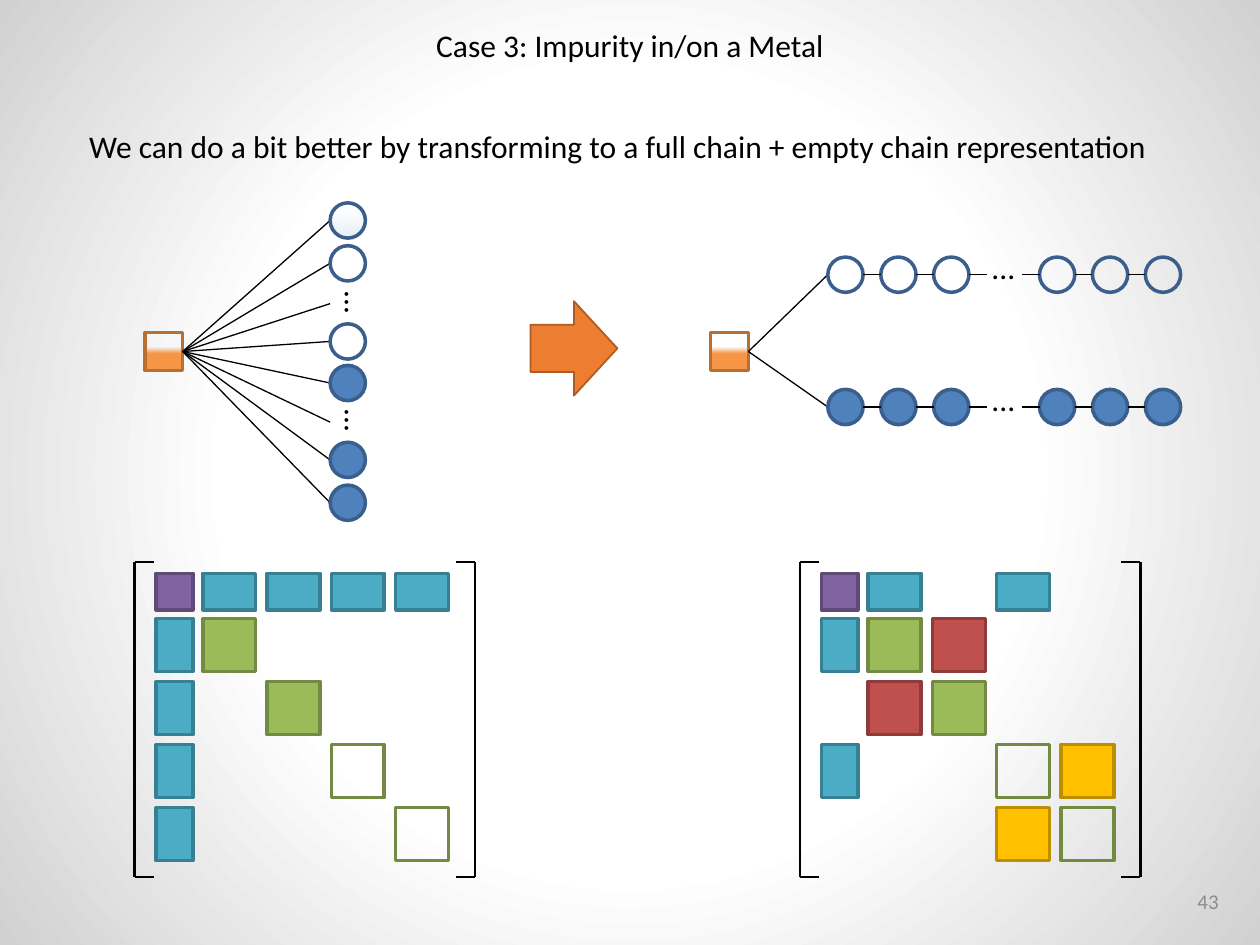
"""Build the slide on turning an impurity star geometry into a full and an empty chain."""
from pptx import Presentation
from pptx.dml.color import RGBColor
from pptx.enum.shapes import MSO_CONNECTOR, MSO_SHAPE
from pptx.enum.text import MSO_ANCHOR, MSO_AUTO_SIZE, PP_ALIGN
from pptx.oxml import parse_xml
from pptx.oxml.ns import qn
from pptx.util import Inches, Pt
from lxml.etree import SubElement

TEXTS = [
    {"text": "We can do a bit better by transforming to a full chain + empty chain representation",
     "at": (0.61, 0.96, 8.82, 0.4)},
    {"text": "Case 3: Impurity in/on a Metal", "at": (3.34, 0.16, 3.32, 0.4),
     "frame": {"word_wrap": False}, "para": {"alignment": PP_ALIGN.CENTER}},
    {"text": "43", "at": (7.52, 6.95, 2.25, 0.4), "style": "number",
     "frame": {"vertical_anchor": MSO_ANCHOR.MIDDLE}, "para": {"alignment": PP_ALIGN.RIGHT}},
]
BATH_SITES = [(1.75, "fading"), (2.09, "empty"), (2.41, "dots"), (2.71, "empty"),
              (3.04, "full"), (3.35, "dots"), (3.65, "full"), (3.99, "full")]
CHAIN_SLOTS = ["site", "site", "site", "dots", "site", "site", "site"]
CHAINS = [(3.23, "full"), (2.18, "empty")]
MATRICES = [
    (1.24, ["PCCCC", "CG...", "C.G..", "C..E.", "C...E"]),
    (6.52, ["PC.C.", "CGR..", ".RG..", "C..EY", "...YE"]),
]
CELL_STYLES = {"P": "impurity", "C": "coupling", "G": "filled", "E": "unfilled",
               "R": "hopping", "Y": "empty hopping"}

THEME = {
    "font": "Calibri",
    "text": {"body": (18, "000000"), "number": (12, "8C8C8C")},
    "background": [(0, "FFFFFF", 100), (51, "FFFFFF", 100), (100, "D1D1D1", 100)],
    "link": ("000000", 0.75),
    "bracket": ("000000", 1.5),
    "shapes": {
        "arrow": ("ED7D31", "AF5C24", 1),
        "half": ([(0, "F79646", 0), (38, "F79646", 0), (55, "F79646", 100),
                  (100, "F79646", 100)], "B76F34", 2),
        "fading": ([(0, "4F81BD", 0), (16, "4F81BD", 0), (100, "4F81BD", 13)], "3A5F8C", 2),
        "empty": (None, "3A5F8C", 2),
        "full": ("4F81BD", "3A5F8C", 2),
        "impurity": ("8064A2", "5F4A78", 2),
        "coupling": ("4BACC6", "377F92", 2),
        "filled": ("9BBB59", "738A42", 2),
        "unfilled": (None, "738A42", 2),
        "hopping": ("C0504D", "8E3B39", 2),
        "empty hopping": ("FFC000", "BD8E00", 2),
    },
}

SITE = 0.28
SQUARE = 0.3
SQUARE_TOP = 2.64
BATH_LEFT = 2.62
CHAIN_LEFT, CHAIN_STEP = 6.57, 0.42
MATRIX_TOP, NARROW, WIDE = 4.55, 0.29, 0.42
COLUMNS = [(0, NARROW)] + [(0.37 + 0.51 * i, WIDE) for i in range(4)]
ROWS = [(0, NARROW)] + [(0.36 + 0.5 * i, WIDE) for i in range(4)]
BRACKET_TOP, BRACKET_BOTTOM, BRACKET_TICK = 4.46, 6.96, 0.15


def apply(target, values):
    for name, value in values.items():
        setattr(target, name, value)


def gradient(stops, direction):
    marks = "".join(
        f'<a:gs pos="{place * 1000}"><a:srgbClr val="{color}">'
        f'<a:alpha val="{opacity * 1000}"/></a:srgbClr></a:gs>'
        for place, color, opacity in stops)
    return parse_xml('<a:gradFill xmlns:a="http://schemas.openxmlformats.org/drawingml/2006/main" '
                     f'rotWithShape="1"><a:gsLst>{marks}</a:gsLst>{direction}</a:gradFill>')


def paint_background(page):
    page.background.fill.solid()
    solid = page.background.fill._xPr.find(qn("a:solidFill"))
    center = '<a:fillToRect l="50000" t="50000" r="50000" b="50000"/>'
    radial = gradient(THEME["background"], f'<a:path path="circle">{center}</a:path>')
    solid.getparent().replace(solid, radial)


def add_text(page, text, at, style="body", frame=None, para=None, rotation=0):
    box = page.shapes.add_textbox(*map(Inches, at))
    box.rotation = rotation
    apply(box.text_frame, {"word_wrap": True, "auto_size": MSO_AUTO_SIZE.SHAPE_TO_FIT_TEXT,
                           **(frame or {})})
    first = box.text_frame.paragraphs[0]
    apply(first, para or {})
    span = first.add_run()
    span.text = text
    size, color = THEME["text"][style]
    apply(span.font, {"name": THEME["font"], "size": Pt(size)})
    span.font.color.rgb = RGBColor.from_string(color)


def add_shape(page, kind, at, style):
    fill, line, width = THEME["shapes"][style]
    shape = page.shapes.add_shape(kind, *map(Inches, at))
    shape.shadow.inherit = False
    if fill is None:
        shape.fill.background()
    elif isinstance(fill, str):
        shape.fill.solid()
        shape.fill.fore_color.rgb = RGBColor.from_string(fill)
    else:
        shape.fill.solid()
        solid = shape._element.spPr.find(qn("a:solidFill"))
        solid.getparent().replace(solid, gradient(fill, '<a:lin ang="5400000" scaled="0"/>'))
    shape.line.color.rgb = RGBColor.from_string(line)
    shape.line.width = Pt(width)
    return shape


def add_line(shapes, start, end, style):
    color, width = THEME[style]
    line = shapes.add_connector(MSO_CONNECTOR.STRAIGHT, *map(Inches, (*start, *end)))
    line.line.color.rgb = RGBColor.from_string(color)
    line.line.width = Pt(width)
    SubElement(line._element.spPr, qn("a:effectLst"))
    return line


def add_site(page, left, middle, style):
    add_shape(page, MSO_SHAPE.OVAL, (left, middle - SITE / 2, SITE, SITE), style)


def add_impurity(page, left, ends):
    square = add_shape(page, MSO_SHAPE.RECTANGLE, (left, SQUARE_TOP, SQUARE, SQUARE), "half")
    for end in ends:
        start = (left + SQUARE, SQUARE_TOP + SQUARE / 2)
        add_line(page.shapes, start, end, "link").begin_connect(square, 3)


def add_star(page):
    add_impurity(page, 1.15, [(BATH_LEFT, middle) for middle, _ in BATH_SITES])
    for middle, style in BATH_SITES:
        if style == "dots":
            add_text(page, "...", (BATH_LEFT + 0.01, middle - 0.2, 0.41, 0.4), rotation=90)
        else:
            add_site(page, BATH_LEFT, middle, style)


def add_chains(page):
    add_impurity(page, 5.64, [(CHAIN_LEFT, middle) for middle, _ in CHAINS])
    for middle, style in CHAINS:
        for index, slot in enumerate(CHAIN_SLOTS):
            left = CHAIN_LEFT + index * CHAIN_STEP
            if slot == "dots":
                add_text(page, "...", (left - 0.06, middle - 0.26, 0.53, 0.4))
            else:
                add_site(page, left, middle, style)
            if index:
                add_line(page.shapes, (left - CHAIN_STEP + SITE, middle), (left, middle), "link")


def add_bracket(page, x, tick):
    group = page.shapes.add_group_shape()
    add_line(group.shapes, (x, BRACKET_TOP), (x, BRACKET_BOTTOM), "bracket")
    for y in (BRACKET_BOTTOM, BRACKET_TOP):
        add_line(group.shapes, (x + tick, y), (x, y), "bracket")


def add_matrix(page, left, grid):
    for (y, height), row in zip(ROWS, grid):
        for (x, width), cell in zip(COLUMNS, row):
            if cell in CELL_STYLES:
                at = (left + x, MATRIX_TOP + y, width, height)
                add_shape(page, MSO_SHAPE.RECTANGLE, at, CELL_STYLES[cell])
    add_bracket(page, left - 0.17, BRACKET_TICK)
    add_bracket(page, left + 2.53, -BRACKET_TICK)


def main():
    deck = Presentation()
    apply(deck, {"slide_width": Inches(10), "slide_height": Inches(7.5)})
    page = deck.slides.add_slide(deck.slide_layouts[6])
    paint_background(page)
    for entry in TEXTS:
        add_text(page, **entry)
    add_shape(page, MSO_SHAPE.RIGHT_ARROW, (4.21, 2.39, 0.69, 0.75), "arrow")
    add_star(page)
    add_chains(page)
    for left, grid in MATRICES:
        add_matrix(page, left, grid)
    deck.save("out.pptx")


if __name__ == "__main__":
    main()
